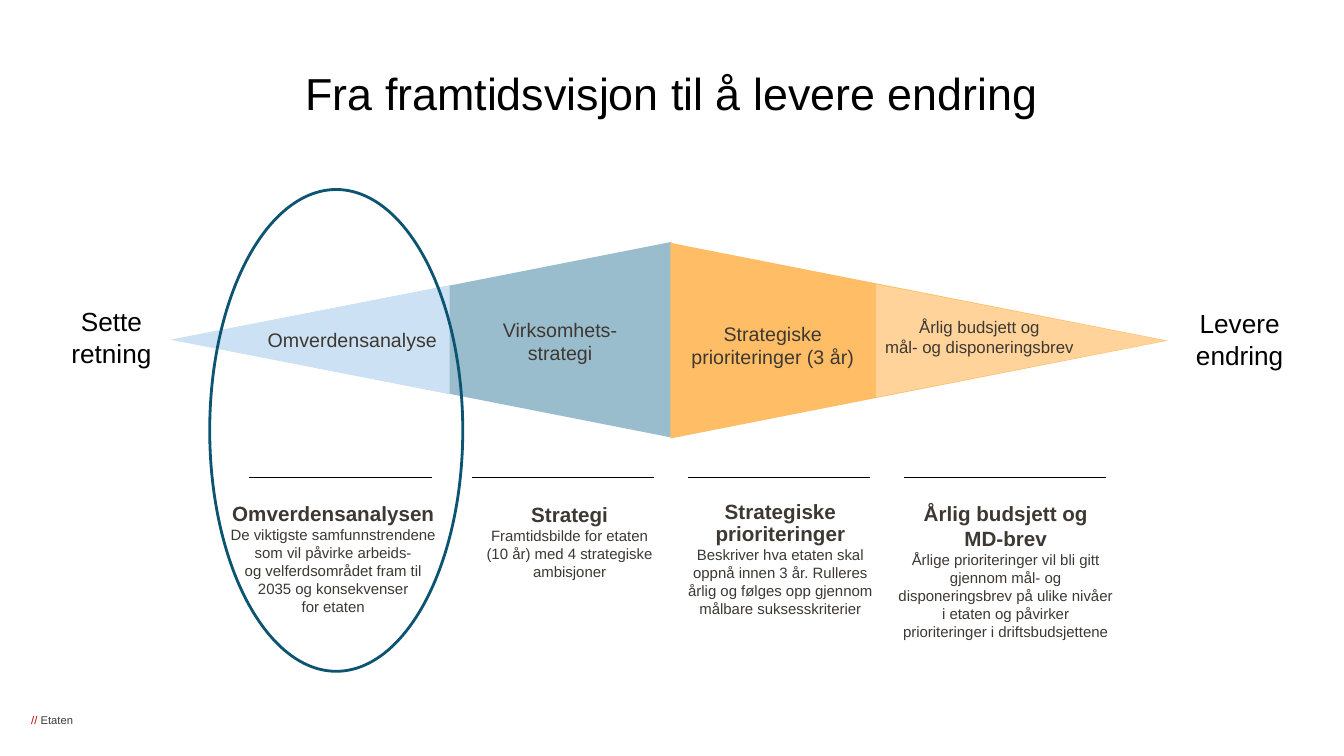
from dataclasses import dataclass

import pptx
import pptx.dml.color
import pptx.enum.shapes
import pptx.enum.text
import pptx.oxml
import pptx.util
from pptx.util import Inches

ALIGN = pptx.enum.text.PP_ALIGN
ANCHOR = pptx.enum.text.MSO_ANCHOR
SHAPE = pptx.enum.shapes.MSO_SHAPE


@dataclass(frozen=True)
class Theme:
    font: str = "Arial"
    black: str = "000000"
    text: str = "3E3832"
    accent: str = "C30000"
    ring: str = "0C5472"
    pale_blue: str = "CCE1F3"
    blue: str = "99BDCD"
    orange: str = "FFBD66"
    pale_orange: str = "FFD399"
    title_size: float = 32
    end_size: float = 18.7
    heading_size: float = 14.7
    label_size: float = 14
    small_label_size: float = 12
    body_size: float = 10.7
    footer_size: float = 8


def color(value):
    return pptx.dml.color.RGBColor.from_string(value)


class SlideBuilder:
    def __init__(self, slide, theme):
        self.slide = slide
        self.theme = theme

    def style(self, font, size, font_color, bold=False):
        font.name = self.theme.font
        font.size = pptx.util.Pt(size)
        font.bold = bold
        font.color.rgb = color(font_color)

    def title(self, text):
        title = self.slide.shapes.title
        title.left, title.top = Inches(0), Inches(0.26)
        title.width, title.height = Inches(13.33), Inches(1.38)
        title.text_frame.vertical_anchor = ANCHOR.MIDDLE
        paragraph = title.text_frame.paragraphs[0]
        self.fill_paragraph(paragraph, text, self.theme.title_size, self.theme.black)
        paragraph.line_spacing = 0.9

    def text_frame(self, left, top, width, height, anchor=ANCHOR.TOP, wrap=True):
        box = self.slide.shapes.add_textbox(
            Inches(left), Inches(top), Inches(width), Inches(height))
        frame = box.text_frame
        frame.word_wrap = wrap
        frame.vertical_anchor = anchor
        frame.margin_left = frame.margin_right = 0
        frame.margin_top = frame.margin_bottom = 0
        return frame

    def fill_paragraph(self, paragraph, text, size, font_color, bold=False):
        paragraph.text = text
        paragraph.alignment = ALIGN.CENTER
        self.style(paragraph.font, size, font_color, bold)

    def label(self, left, top, width, text, size, font_color):
        frame = self.text_frame(left, top, width, 0.73, ANCHOR.MIDDLE)
        self.fill_paragraph(frame.paragraphs[0], text, size, font_color)

    def description(self, left, top, width, height, heading, body, spacing=None):
        frame = self.text_frame(left, top, width, height)
        theme = self.theme
        first = frame.paragraphs[0]
        self.fill_paragraph(first, heading, theme.heading_size, theme.text, True)
        if spacing:
            first.line_spacing = pptx.util.Pt(spacing)
        self.fill_paragraph(frame.add_paragraph(), body, theme.body_size, theme.text)

    def shape(self, kind, left, top, width, height):
        shape = self.slide.shapes.add_shape(
            kind, Inches(left), Inches(top), Inches(width), Inches(height))
        shape.shadow.inherit = False
        return shape

    def wedge(self, tip, middle, length, height, fill, points_left):
        """Draw a sideways triangle from its tip; the box is given before rotation."""
        center = tip + length / 2 if points_left else tip - length / 2
        wedge = self.shape(SHAPE.ISOSCELES_TRIANGLE, center - height / 2,
                           middle - length / 2, height, length)
        wedge.rotation = 270 if points_left else 90
        wedge.fill.solid()
        wedge.fill.fore_color.rgb = color(fill)
        wedge.line.fill.background()

    def ring(self, left, top, width, height):
        ring = self.shape(SHAPE.OVAL, left, top, width, height)
        ring.fill.background()
        ring.line.color.rgb = color(self.theme.ring)
        ring.line.width = pptx.util.Pt(2)

    def rule(self, left, right, y):
        rule = self.slide.shapes.add_connector(
            pptx.enum.shapes.MSO_CONNECTOR.STRAIGHT,
            Inches(left), Inches(y), Inches(right), Inches(y))
        rule.line.color.rgb = color(self.theme.black)
        rule.line.width = pptx.util.Pt(0.5)
        rule._element.spPr.append(pptx.oxml.parse_xml(
            '<a:effectLst xmlns:a="http://schemas.openxmlformats.org/drawingml/2006/main"/>'))

    def footer(self, mark, name):
        frame = self.text_frame(0.31, 7.08, 0.6, 0.13, wrap=False)
        paragraph = frame.paragraphs[0]
        for text, font_color in ((mark, self.theme.accent), (name, self.theme.text)):
            run = paragraph.add_run()
            run.text = text
            self.style(run.font, self.theme.footer_size, font_color)


def main():
    presentation = pptx.Presentation()
    presentation.slide_width = Inches(13.33)
    presentation.slide_height = Inches(7.5)
    slide = presentation.slides.add_slide(presentation.slide_layouts[5])

    theme = Theme()
    builder = SlideBuilder(slide, theme)
    builder.footer("// ", "Etaten")
    builder.title("Fra framtidsvisjon til å levere endring")

    for tip, middle, length, height, fill, points_left in (
        (1.73, 3.37, 4.93, 1.94, theme.blue, True),
        (11.58, 3.38, 4.93, 1.94, theme.orange, False),
        (1.69, 3.37, 2.77, 1.08, theme.pale_blue, True),
        (11.56, 3.38, 2.87, 1.12, theme.pale_orange, False),
    ):
        builder.wedge(tip, middle, length, height, fill, points_left)

    for left, top, width, text, size, font_color in (
        (2.53, 3.01, 1.93, "Omverdensanalyse", theme.label_size, theme.text),
        (4.45, 3.02, 2.21, "Virksomhets-\vstrategi", theme.label_size, theme.text),
        (6.65, 3.06, 2.03, "Strategiske prioriteringer (3 år)",
         theme.label_size, theme.text),
        (8.75, 2.98, 1.93, "Årlig budsjett og\vmål- og disponeringsbrev",
         theme.small_label_size, theme.text),
        (0.46, 2.98, 1.29, "Sette retning", theme.end_size, theme.black),
        (11.54, 3, 1.51, "Levere endring", theme.end_size, theme.black),
    ):
        builder.label(left, top, width, text, size, font_color)

    for left, right in ((2.47, 4.28), (4.68, 6.49), (6.82, 8.63), (8.97, 10.97)):
        builder.rule(left, right, 4.74)

    builder.ring(2.08, 1.88, 2.51, 4.78)

    builder.description(
        2.08, 4.97, 2.45, 1.62, "Omverdensanalysen",
        "De viktigste samfunnstrendene\vsom vil påvirke arbeids-\v"
        "og velferdsområdet fram til\v2035 og konsekvenser\vfor etaten")
    builder.description(
        4.81, 5, 1.68, 1.46, "Strategi",
        "Framtidsbilde for etaten (10 år) med 4 strategiske ambisjoner", 16)
    builder.description(
        6.8, 4.97, 1.88, 1.46, "Strategiske prioriteringer",
        "Beskriver hva etaten skal oppnå innen 3 år. Rulleres årlig og følges "
        "opp gjennom målbare suksesskriterier", 16)
    builder.description(
        8.91, 4.97, 2.13, 1.16, "Årlig budsjett og\vMD-brev",
        "Årlige prioriteringer vil bli gitt gjennom mål- og disponeringsbrev på "
        "ulike nivåer i etaten og påvirker prioriteringer i driftsbudsjettene")

    presentation.save("out.pptx")


if __name__ == "__main__":
    main()
